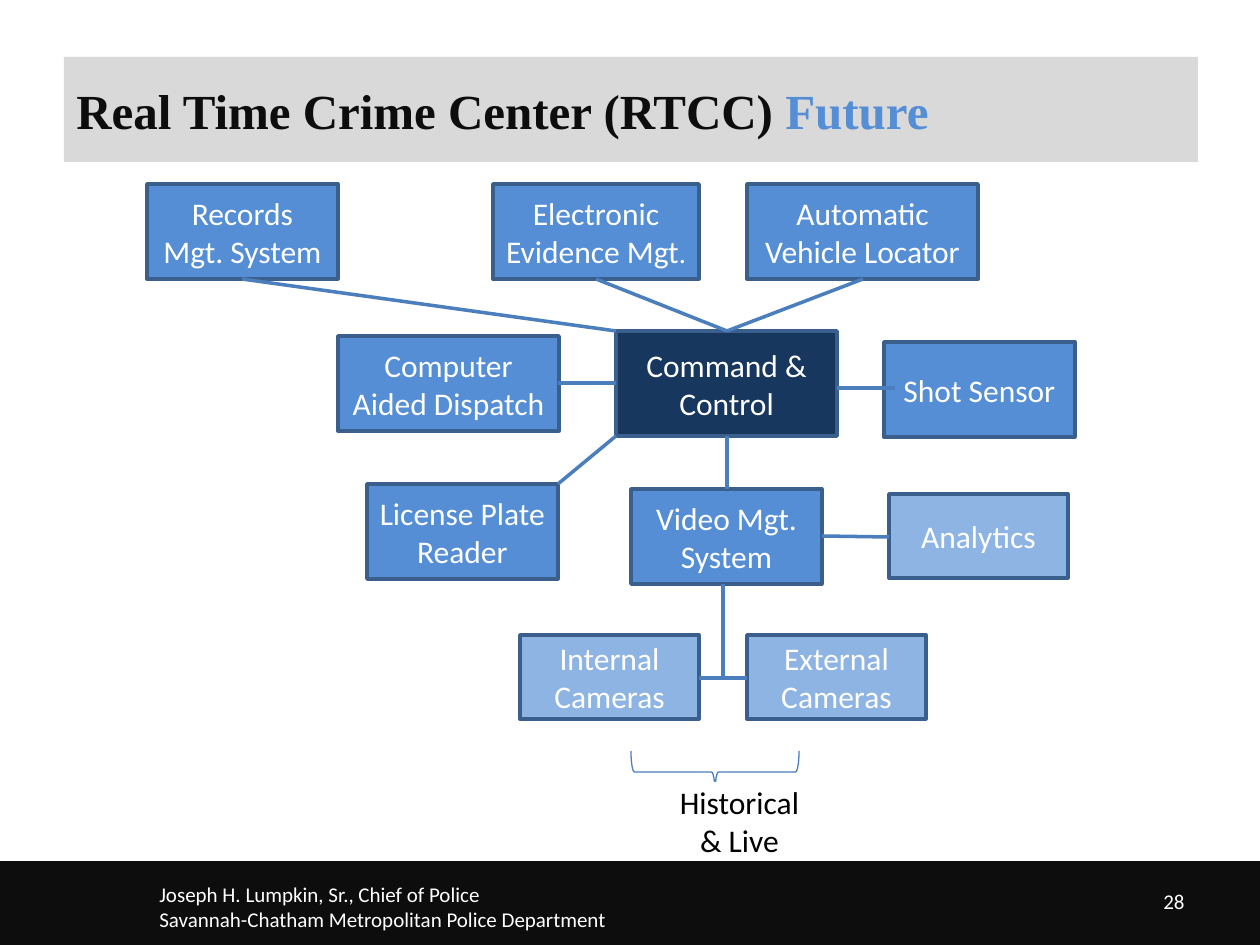
from pptx import Presentation, util as u
from pptx.dml import color
from pptx.enum import shapes, text
from pptx.oxml import ns
from lxml import etree

SCALE = 914400 / 126
FONT = "Calibri"
WHITE, BLACK, NIGHT, GREY = "FFFFFF", "000000", "0D0D0D", "D9D9D9"
NAVY, BLUE, PALE = "17375E", "558ED5", "8EB4E3"
EDGE, LINK = "3A5F8C", "4B7EBC"
LEFT, MID, RIGHT = text.PP_ALIGN.LEFT, text.PP_ALIGN.CENTER, text.PP_ALIGN.RIGHT


def px(num):
    """Turn pixels into EMU."""
    return u.Emu(round(num * SCALE))


def paint(part, tone):
    """Set a fill, line or font colour from a hex string."""
    if hasattr(part, "solid"):
        part.solid()
        part.fore_color.rgb = color.RGBColor.from_string(tone)
    else:
        part.color.rgb = color.RGBColor.from_string(tone)


def write(item, words, size=18, tone=WHITE, align=MID, font=FONT):
    """Fill a shape with wrapped, middle-anchored paragraphs."""
    frame = item.text_frame
    frame.word_wrap = True
    frame.vertical_anchor = text.MSO_ANCHOR.MIDDLE
    for i, line in enumerate(words):
        para = frame.add_paragraph() if i else frame.paragraphs[0]
        para.text = line
        para.alignment = align
        para.font.size, para.font.name = u.Pt(size), font
        paint(para.font, tone)
    return frame.paragraphs[0]


def block(slide, box, fill=None, edge=None, width=2, kind=shapes.MSO_SHAPE.RECTANGLE):
    """Add a flat shape with an optional fill and edge."""
    item = slide.shapes.add_shape(kind, *map(px, box))
    item.shadow.inherit = False
    if fill:
        paint(item.fill, fill)
    else:
        item.fill.background()
    if edge:
        paint(item.line, edge)
        item.line.width = u.Pt(width)
    else:
        item.line.fill.background()
    return item


def label(slide, box, words, align):
    """Add a small white text box."""
    write(slide.shapes.add_textbox(*map(px, box)), [words], 12, WHITE, align)


def link(slide, start, end):
    """Add a straight line between two points."""
    wire = slide.shapes.add_connector(shapes.MSO_CONNECTOR.STRAIGHT, *map(px, start + end))
    paint(wire.line, LINK)
    wire.line.width = u.Pt(2)
    etree.SubElement(wire._element.spPr, ns.qn("a:effectLst"))


def header(slide, box):
    """Draw the title band with its blue last word."""
    para = write(block(slide, box, GREY), ["Real Time Crime Center (RTCC) "], 28, NIGHT, LEFT, "Times New Roman")
    para.font.bold = True
    run = para.add_run()
    run.text = "Future"
    paint(run.font, BLUE)


def footer(slide, box):
    """Draw the dark band with the credit and page number."""
    x, y, wide, tall = box
    block(slide, box, NIGHT)
    label(slide, (x + 147, y + 21, 630, 50),
          "Joseph H. Lumpkin, Sr., Chief of Police\vSavannah-Chatham Metropolitan Police Department", LEFT)
    label(slide, (x + 903, y + 15, 294, 50), "28", RIGHT)


def chart(slide, box):
    """Draw the system map inside its box."""
    left, top = box[:2]
    nodes = [
        ("Command & Control", 469, 147, 221, 105, NAVY),
        ("Video Mgt. System", 484, 305, 191, 95, BLUE),
        ("Analytics", 742, 310, 179, 84, PALE),
        ("Internal Cameras", 373, 451, 179, 84, PALE),
        ("External Cameras", 600, 451, 179, 84, PALE),
        ("Computer Aided Dispatch", 191, 152, 221, 95, BLUE),
        ("Electronic Evidence Mgt", 346, 0, 206, 95, BLUE),
        ("Automatic Vehicle Locator", 600, 0, 231, 95, BLUE),
        ("License Plate Reader", 220, 300, 191, 95, BLUE),
        ("Shot Sensor", 737, 158, 191, 95, BLUE),
        ("Records Mgt. System", 0, 0, 191, 95, BLUE),
    ]
    for words, x, y, wide, tall, fill in nodes:
        para = write(block(slide, (left + x, top + y, wide, tall), fill, EDGE), [words])
        if words.startswith("Electronic"):
            dot = para.add_run()
            dot.text = "."
            dot.font.size = u.Pt(16)
    links = [
        (469, 199, 411, 199), (748, 204, 690, 204), (469, 252, 411, 300),
        (576, 494, 576, 400), (600, 494, 552, 494), (742, 353, 675, 352),
        (580, 305, 580, 252), (580, 147, 449, 95), (716, 95, 580, 147),
        (469, 147, 95, 95),
    ]
    for x1, y1, x2, y2 in links:
        link(slide, (left + x1, top + y1), (left + x2, top + y2))
    brace = block(slide, (left + 547, top + 504, 42, 168), None, LINK, 0.75, shapes.MSO_SHAPE.LEFT_BRACE)
    brace.rotation = 270
    write(block(slide, (left + 479, top + 598, 227, 78), WHITE), ["Historical", "& Live"], 18, BLACK)


def main():
    """Build and save the slide."""
    deck = Presentation()
    deck.slide_width, deck.slide_height = px(1260), px(945)
    slide = deck.slides.add_slide(deck.slide_layouts[6])
    footer(slide, (0, 861, 1260, 84))
    chart(slide, (147, 184, 929, 676))
    header(slide, (64, 57, 1134, 105))
    deck.save("out.pptx")


if __name__ == "__main__":
    main()
